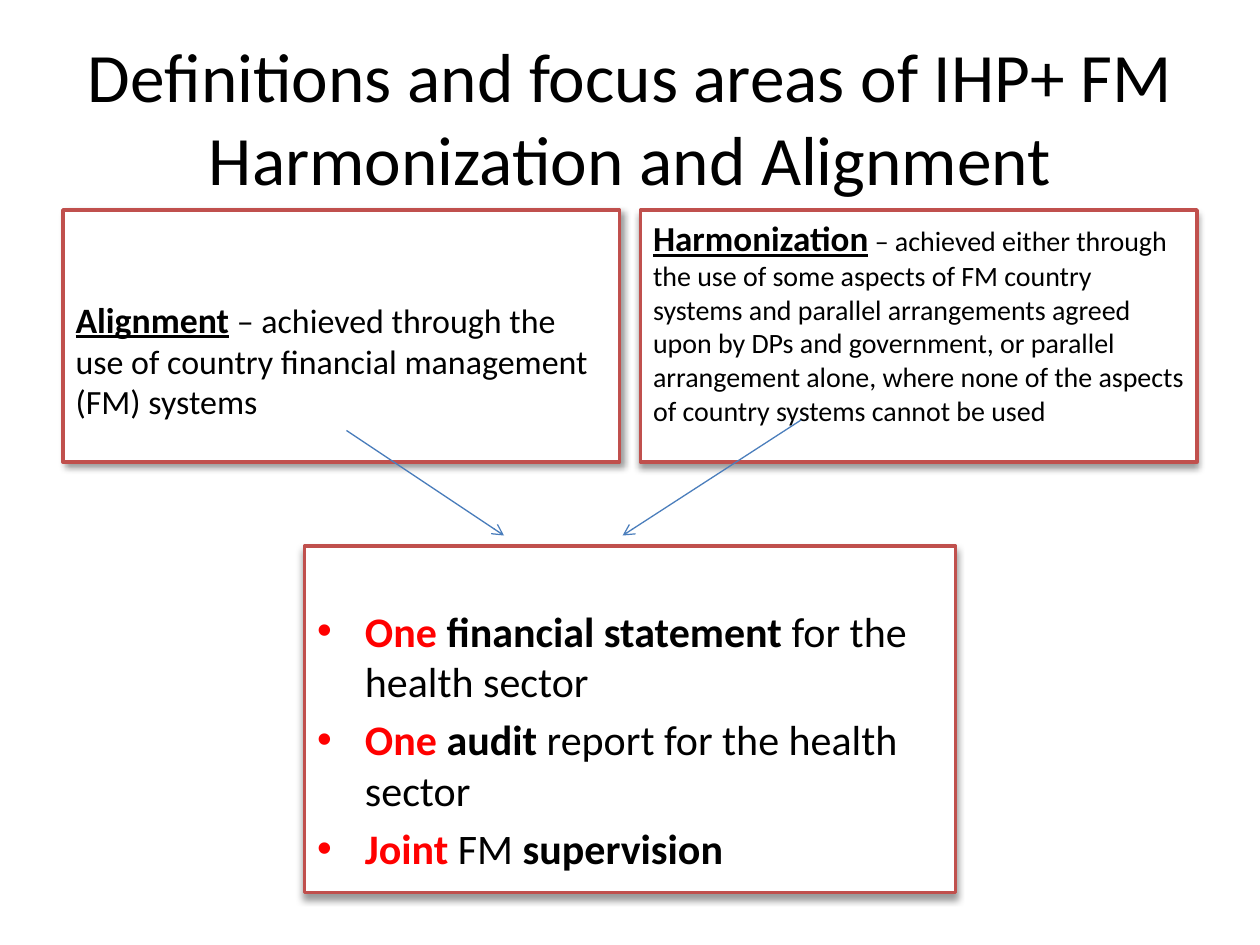
from pptx import Presentation
from pptx.dml.color import RGBColor
from pptx.enum.shapes import MSO_CONNECTOR
from pptx.enum.text import MSO_ANCHOR, MSO_AUTO_SIZE, PP_ALIGN
from pptx.oxml import parse_xml
from pptx.oxml.ns import nsdecls
from pptx.util import Inches, Pt

BLACK = RGBColor(0x00, 0x00, 0x00)
WHITE = RGBColor(0xFF, 0xFF, 0xFF)
RED = RGBColor(0xFF, 0x00, 0x00)
BRICK = RGBColor(0xC0, 0x50, 0x4D)
BLUE = RGBColor(0x4B, 0x7E, 0xBC)

STRAIGHT = MSO_CONNECTOR.STRAIGHT
CENTER, LEFT = PP_ALIGN.CENTER, PP_ALIGN.LEFT
TOP, MIDDLE, BOTTOM = MSO_ANCHOR.TOP, MSO_ANCHOR.MIDDLE, MSO_ANCHOR.BOTTOM
NO_FIT = MSO_AUTO_SIZE.NONE

WIDTH, HEIGHT = Inches(10), Inches(7.5)
COLUMNS, ROWS = 120, 90
COMPARISON_LAYOUT = 4


def add_run(paragraph, text, *, size, color=BLACK, bold=False, underline=False):
    run = paragraph.add_run()
    run.text = text
    font = run.font
    font.name, font.size, font.bold, font.underline = "Calibri", Pt(size), bold, underline
    font.color.rgb = color


class SlideBuilder:
    """Holds the style and the slide; places are columns and rows of the grid."""

    def __init__(self, slide):
        self.slide = slide
        self.frame_color, self.frame_width = BRICK, Pt(2)
        self.arrow_color, self.arrow_width = BLUE, Pt(0.75)

    def x(self, columns):
        return round(WIDTH * columns / COLUMNS)

    def y(self, rows):
        return round(HEIGHT * rows / ROWS)

    def place(self, holder, column, row, columns, rows, anchor):
        holder.left, holder.top = self.x(column), self.y(row)
        holder.width, holder.height = self.x(columns), self.y(rows)
        frame = holder.text_frame
        frame.word_wrap, frame.auto_size = True, NO_FIT
        frame.vertical_anchor = anchor
        return frame

    def title(self, text, *place, size):
        frame = self.place(self.slide.shapes.title, *place, MIDDLE)
        frame.paragraphs[0].alignment = CENTER
        add_run(frame.paragraphs[0], text, size=size)

    def box(self, index, paragraphs, *place, anchor, top=0.05, bottom=0.05,
            shadow_angle=90, bullets=False):
        holder = self.slide.placeholders[index]
        frame = self.place(holder, *place, anchor)
        frame.margin_top, frame.margin_bottom = Inches(top), Inches(bottom)
        holder.fill.solid()
        holder.fill.fore_color.rgb = WHITE
        holder.line.color.rgb = self.frame_color
        holder.line.width = self.frame_width
        self.shadow(holder, shadow_angle)
        for number, runs in enumerate(paragraphs):
            paragraph = frame.add_paragraph() if number else frame.paragraphs[0]
            paragraph.alignment = LEFT
            paragraph.space_before, paragraph.space_after = Pt(0), Pt(4.5 if bullets else 0)
            self.bullet(paragraph, bullets)
            for text, style in runs:
                add_run(paragraph, text, **style)

    def bullet(self, paragraph, shown):
        properties = paragraph._p.get_or_add_pPr()
        indent = Inches(0.38) if shown else 0
        properties.set("marL", str(indent))
        properties.set("indent", str(-indent))
        mark = 'a:buChar {} char="•"' if shown else "a:buNone {}"
        if shown:
            properties.append(parse_xml(f'<a:buFont {nsdecls("a")} typeface="Arial"/>'))
        properties.append(parse_xml(f'<{mark.format(nsdecls("a"))}/>'))

    def shadow(self, holder, angle):
        holder._element.spPr.append(parse_xml(
            f'<a:effectLst {nsdecls("a")}><a:outerShdw blurRad="{Pt(4)}" dist="{Pt(3)}" '
            f'dir="{angle * 60000}" algn="tl" rotWithShape="0"><a:srgbClr val="{BLACK}">'
            '<a:alpha val="40000"/></a:srgbClr></a:outerShdw></a:effectLst>'))

    def arrow(self, start, end):
        connector = self.slide.shapes.add_connector(
            STRAIGHT, self.x(start[0]), self.y(start[1]), self.x(end[0]), self.y(end[1]))
        connector.line.color.rgb = self.arrow_color
        connector.line.width = self.arrow_width
        connector.line._get_or_add_ln().append(
            parse_xml(f'<a:tailEnd {nsdecls("a")} type="arrow"/>'))
        connector._element.spPr.append(parse_xml(f'<a:effectLst {nsdecls("a")}/>'))

    def remove_empty(self):
        for holder in list(self.slide.placeholders):
            if not holder.text_frame.text:
                holder._element.getparent().remove(holder._element)


def main():
    deck = Presentation()
    deck.slide_width, deck.slide_height = WIDTH, HEIGHT
    builder = SlideBuilder(deck.slides.add_slide(deck.slide_layouts[COMPARISON_LAYOUT]))

    # Title
    builder.title("Definitions and focus areas of IHP+ FM Harmonization and Alignment",
                  6, 3.6, 108, 15, size=39.6)

    # Definitions
    alignment = [("Alignment", dict(size=20.4, bold=True, underline=True)),
                 (" – achieved through the use of country financial management (FM) systems",
                  dict(size=19.4))]
    harmonization = [("Harmonization", dict(size=20, bold=True, underline=True)),
                     (" – achieved either through the use of some aspects of FM country "
                      "systems and parallel arrangements agreed upon by DPs and government, "
                      "or parallel arrangement alone, where none of the aspects of country "
                      "systems cannot be used", dict(size=16))]
    builder.box(1, [alignment], 6, 20, 53, 24, anchor=BOTTOM, bottom=0.32, shadow_angle=45)
    builder.box(3, [harmonization], 61, 20, 53, 24, anchor=BOTTOM, bottom=0.28)

    # Focus areas
    plain = dict(size=24)
    strong = dict(plain, bold=True)
    key = dict(strong, color=RED)
    focus_areas = [
        [("One ", key), ("financial statement ", strong), ("for the health sector", plain)],
        [("One ", key), ("audit", strong), (" report for the health sector", plain)],
        [("Joint", key), (" FM ", plain), ("supervision", strong)],
    ]
    builder.box(2, focus_areas, 29, 52, 62, 33, anchor=TOP, top=0.47, bullets=True)
    builder.remove_empty()

    # Arrows from the definitions to the focus areas
    builder.arrow((33, 41), (48, 51))
    builder.arrow((76.3, 40), (59.3, 51))

    deck.save("out.pptx")


if __name__ == "__main__":
    main()
